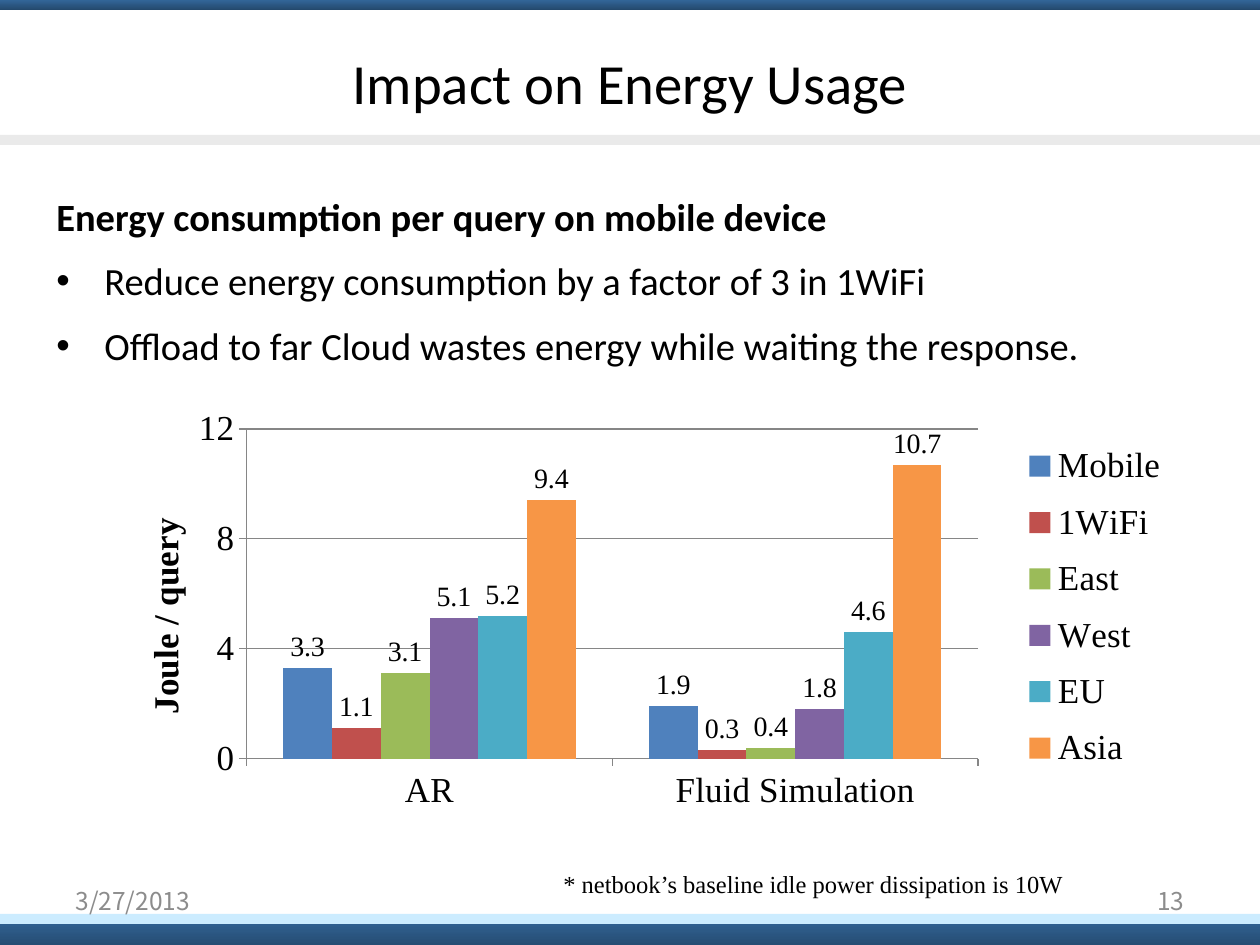
from lxml import etree
from pptx import Presentation, util as u
from pptx.chart.data import CategoryChartData
from pptx.dml.color import RGBColor
from pptx.enum import chart as charts, shapes, text
from pptx.oxml.ns import qn

PX = 914400 / 126
SANS, SERIF, FOOTER = "Calibri", "Times New Roman", "Noto Sans CJK KR"
BLACK, GREY, AXIS = "000000", "8C8C8C", "868686"
BAND = ("336699", "24496D")

BULLETS = [
    "Reduce energy consumption by a factor of 3 in 1WiFi",
    "Offload to far Cloud wastes energy while waiting the response.",
]
SERIES = [
    ("Mobile", (3.3, 1.9), "4F81BD"),
    ("1WiFi", (1.1, 0.3), "C0504D"),
    ("East", (3.1, 0.4), "9BBB59"),
    ("West", (5.1, 1.8), "8064A2"),
    ("EU", (5.2, 4.6), "4BACC6"),
    ("Asia", (9.4, 10.7), "F79646"),
]


def px(*lengths):
    return [u.Emu(round(length * PX)) for length in lengths]


def rgb(value):
    return RGBColor.from_string(value)


def style(font, size, name=SERIF, color=BLACK, bold=False):
    font.size, font.name, font.bold = u.Pt(size), name, bold
    font.color.rgb = rgb(color)


def add_run(para, words, *look, **more):
    span = para.add_run()
    span.text = words
    style(span.font, *look, **more)


def add_bar(page, top, height, *colors):
    """Full-width bar: one colour is solid, two run from top to bottom."""
    bar = page.shapes.add_shape(
        shapes.MSO_SHAPE.RECTANGLE, *px(0, top, 1260, height))
    bar.shadow.inherit = False
    bar.line.fill.background()
    if len(colors) == 1:
        bar.fill.solid()
        bar.fill.fore_color.rgb = rgb(colors[0])
        return
    bar.fill.gradient()
    bar.fill.gradient_angle = 270
    for position, (stop, color) in enumerate(zip(bar.fill.gradient_stops, colors)):
        stop.position = position
        stop.color.rgb = rgb(color)


def add_title(page, words):
    title = page.shapes.title
    title.left, title.top, title.width, title.height = px(63, 38, 1134, 87)
    frame = title.text_frame
    frame.vertical_anchor = text.MSO_ANCHOR.MIDDLE
    para = frame.paragraphs[0]
    para.alignment = text.PP_ALIGN.CENTER
    add_run(para, words, 32.4, SANS)


def add_line(page, area, words, *look, wrap=True, align=text.PP_ALIGN.LEFT,
             anchor=text.MSO_ANCHOR.TOP):
    frame = page.shapes.add_textbox(*px(*area)).text_frame
    frame.word_wrap, frame.vertical_anchor = wrap, anchor
    para = frame.paragraphs[0]
    para.alignment = align
    add_run(para, words, *look)


def add_bullet(para):
    props = para._p.get_or_add_pPr()
    indent = px(48)[0]
    props.set("marL", str(indent))
    props.set("indent", str(-indent))
    etree.SubElement(props, qn("a:buFont"), typeface="Arial")
    etree.SubElement(props, qn("a:buChar"), char="•")


def add_body(page, heading, bullets):
    frame = page.shapes.add_textbox(*px(44, 175, 1101, 218)).text_frame
    frame.word_wrap = True
    for index, words in enumerate([heading, *bullets]):
        para = frame.add_paragraph() if index else frame.paragraphs[0]
        para.line_spacing, para.space_before = 1.25, u.Pt(4)
        if index:
            add_bullet(para)
        add_run(para, words, 22, SANS, bold=not index)


def place(before, inner=False, **fractions):
    """Put a manual layout, in fractions of the chart, ahead of an element."""
    parent = before.getparent()
    for old in parent.findall(qn("c:layout")):
        parent.remove(old)
    layout = etree.Element(qn("c:layout"))
    manual = etree.SubElement(layout, qn("c:manualLayout"))
    if inner:
        etree.SubElement(manual, qn("c:layoutTarget"), val="inner")
    for side in "xy":
        etree.SubElement(manual, qn(f"c:{side}Mode"), val="edge")
    for side, value in fractions.items():
        etree.SubElement(manual, qn(f"c:{side}"), val=str(value))
    before.addprevious(layout)


def format_axis(axis):
    style(axis.tick_labels.font, 20)
    axis.format.line.color.rgb = rgb(AXIS)
    axis.major_tick_mark = charts.XL_TICK_MARK.OUTSIDE
    axis.minor_tick_mark = charts.XL_TICK_MARK.NONE


def format_value_axis(axis, title):
    axis.minimum_scale, axis.maximum_scale, axis.major_unit = 0, 12, 4
    axis.tick_labels.number_format = "0"
    axis.tick_labels.number_format_is_linked = False
    axis.has_major_gridlines = True
    axis.major_gridlines.format.line.color.rgb = rgb(AXIS)
    add_run(axis.axis_title.text_frame.paragraphs[0], title, 20, bold=True)


def format_series(series, color):
    series.format.fill.solid()
    series.format.fill.fore_color.rgb = rgb(color)
    labels = series.data_labels
    labels.show_value = True
    labels.position = charts.XL_LABEL_POSITION.OUTSIDE_END
    labels.number_format, labels.number_format_is_linked = "0.0", False
    style(labels.font, 16)


def add_energy_chart(page):
    data = CategoryChartData(number_format="0.0")
    data.categories = ["AR", "Fluid Simulation"]
    for name, values, _ in SERIES:
        data.add_series(name, values)
    chart = page.shapes.add_chart(
        charts.XL_CHART_TYPE.COLUMN_CLUSTERED, *px(115, 393, 1071, 456), data).chart
    style(chart.font, 10, FOOTER)
    chart.has_title = False
    chart.has_legend = True
    chart.legend.position = charts.XL_LEGEND_POSITION.RIGHT
    chart.legend.include_in_layout = False
    style(chart.legend.font, 20)

    for axis in (chart.category_axis, chart.value_axis):
        format_axis(axis)
    format_value_axis(chart.value_axis, "Joule / query")

    plot = chart.plots[0]
    plot.gap_width, plot.overlap, plot.vary_by_categories = 150, 0, False
    for series, (_, _, color) in zip(plot.series, SERIES):
        format_series(series, color)

    root = chart._chartSpace
    place(root.xpath("//c:plotArea/c:barChart")[0], True,
          x=0.123, y=0.079, w=0.683, h=0.723)
    place(root.xpath("//c:legend/c:overlay")[0], x=0.84, y=0.08, w=0.15, h=0.78)
    place(root.xpath("//c:valAx/c:title/c:overlay")[0], x=0.02, y=0.26)
    rotation = root.xpath("//c:valAx/c:title//a:bodyPr")[0]
    rotation.set("rot", "-5400000")
    rotation.set("vert", "horz")


def main():
    deck = Presentation()
    deck.slide_width, deck.slide_height = px(1260, 945)
    page = deck.slides.add_slide(deck.slide_layouts[5])

    add_bar(page, 917, 32, *BAND)
    add_bar(page, 914, 10, "CCECFF")
    add_bar(page, 135, 10, "EAEAEA")
    add_bar(page, 0, 10, *BAND)

    add_title(page, "Impact on Energy Usage")
    add_body(page, "Energy consumption per query on mobile device", BULLETS)
    add_line(page, (551, 863, 529, 43),
             "* netbook’s baseline idle power dissipation is 10W", 14, wrap=False)
    middle = text.MSO_ANCHOR.MIDDLE
    add_line(page, (63, 876, 294, 50), "3/27/2013", 14, FOOTER, GREY, anchor=middle)
    add_line(page, (903, 876, 294, 50), "13", 14, FOOTER, GREY,
             align=text.PP_ALIGN.RIGHT, anchor=middle)
    add_energy_chart(page)
    deck.save("out.pptx")


if __name__ == "__main__":
    main()
